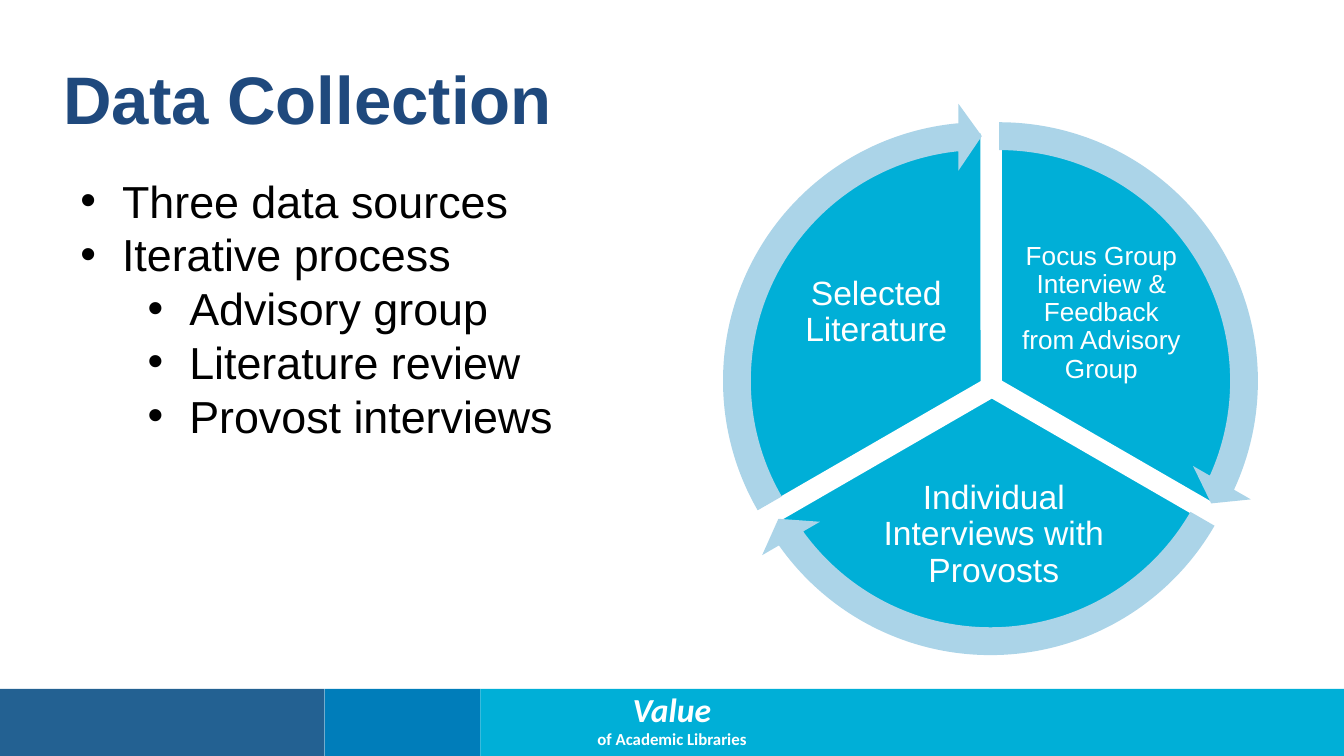
from lxml.etree import SubElement
from pptx import Presentation
from pptx.dml.color import RGBColor as RGB
from pptx.enum.shapes import MSO_SHAPE as Shape
from pptx.enum.text import MSO_ANCHOR as Anchor, PP_ALIGN as Align
from pptx.oxml.ns import qn
from pptx.util import Inches, Pt

WIDTH = Inches(10)
HEIGHT = WIDTH * 9 // 16
CELL = WIDTH / 100  # square grid, 100 columns wide
COLORS = {"navy": "236192", "blue": "007DBA", "cyan": "00AFD7",
          "pale": "ABD4E8", "title": "1F497D", "white": "FFFFFF",
          "black": "000000"}

BANDS = [(0, 24.15, "navy"), (24.15, 11.6, "blue"), (35.75, 64.25, "cyan")]
# box on the grid, start and end angle
SLICES = [((56, 10, 36.8, 36.8), 162, 18),
          ((55.4, 11.1, 36.8, 36.8), 18, 90),
          ((53.8, 9.8, 38.6, 37.3), 90, 162)]
# left, top, head angle, tail angle
ARROWS = [(53.65, 7.65, 14.73, 161.99),
          (53, 8.8, 86.72, 18),
          (52.35, 7.65, 158.73, 90)]
LABELS = [((75.35, 17.8, 13.2, 11), 14,
           "Focus Group Interview & Feedback from Advisory Group"),
          ((64.1, 35, 19.7, 9.6), 18, "Individual Interviews with Provosts"),
          ((58.3, 17.7, 13.8, 11.1), 18, "Selected Literature")]
POINTS = [(0, "Three data sources"), (0, "Iterative process"),
          (1, "Advisory group"), (1, "Literature review"),
          (1, "Provost interviews")]


def color(name):
    return RGB.from_string(COLORS[name])


def grid(*box):
    return [round(n * CELL) for n in box]


def apply(item, style):
    for key, value in style.items():
        setattr(item, key, value)


def style(run, size, tone, **more):
    apply(run.font, {"size": Pt(size), "name": "Arial", **more})
    run.font.color.rgb = color(tone)


def add_form(slide, kind, box, fill, angles=(), edge=None):
    form = slide.shapes.add_shape(kind, *grid(*box))
    form.shadow.inherit = False
    form.fill.solid()
    form.fill.fore_color.rgb = color(fill)
    for i, angle in enumerate(angles):
        form.adjustments[i] = angle
    if edge:
        form.line.color.rgb = color(edge)
        form.line.width = Pt(2)
    else:
        form.line.fill.background()


def add_text(slide, box, **more):
    frame = slide.shapes.add_textbox(*grid(*box)).text_frame
    apply(frame, {"word_wrap": True, **more})
    return frame


def add_title(slide, text):
    title = slide.shapes.title
    apply(title, dict(zip(("left", "top", "width", "height"),
                          grid(3.7, 3.55, 92.3, 7.5))))
    frame = title.text_frame
    frame.vertical_anchor = Anchor.MIDDLE
    para = frame.paragraphs[0]
    para.alignment = Align.LEFT
    run = para.add_run()
    run.text = text
    style(run, 36, "title", bold=True)


def add_label(slide, box, size, text):
    edges = ("left", "top", "right", "bottom")
    frame = add_text(slide, box, vertical_anchor=Anchor.MIDDLE,
                     **{f"margin_{edge}": Inches(0.02) for edge in edges})
    para = frame.paragraphs[0]
    apply(para, {"alignment": Align.CENTER, "line_spacing": 0.9})
    run = para.add_run()
    run.text = text
    style(run, size, "white")


def add_points(slide, box, points):
    frame = add_text(slide, box)
    for i, (level, text) in enumerate(points):
        para = frame.add_paragraph() if i else frame.paragraphs[0]
        props = para._p.get_or_add_pPr()
        props.set("marL", str(Inches(0.31 + 0.5 * level)))
        props.set("indent", str(Inches(-0.31)))
        SubElement(props, qn("a:buFont")).set("typeface", "Arial")
        SubElement(props, qn("a:buChar")).set("char", "•")
        apply(para, {"level": level, "line_spacing": Pt(28.8)})
        run = para.add_run()
        run.text = text
        style(run, 24, "black")


def add_footer(slide):
    for left, width, tone in BANDS:
        add_form(slide, Shape.RECTANGLE, (left, 51.25, width, 5), tone)
    para = add_text(slide, (0, 50.75, 100, 5.5)).paragraphs[0]
    para.alignment = Align.CENTER
    name = para.add_run()
    name.text = "Value"
    style(name, 18, "white", name="Calibri", bold=True, italic=True)
    para.add_line_break()
    rest = para.add_run()
    rest.text = "of Academic Libraries"
    style(rest, 9, "white", name="Calibri", bold=True)


def add_cycle(slide):
    for box, start, end in SLICES:
        add_form(slide, Shape.PIE, box, "cyan", (start, end), "white")
    for left, top, head, tail in ARROWS:
        add_form(slide, Shape.CIRCULAR_ARROW, (left, top, 41.4, 41.4),
                 "pale", (0.05, 3.28, head, tail, 0.06))
    for label in LABELS:
        add_label(slide, *label)


def main():
    deck = Presentation()
    apply(deck, {"slide_width": WIDTH, "slide_height": HEIGHT})
    slide = deck.slides.add_slide(deck.slide_layouts[5])
    add_footer(slide)
    add_title(slide, "Data Collection")
    add_cycle(slide)
    add_points(slide, (5, 12.4, 45.8, 24.2), POINTS)
    deck.save("out.pptx")


if __name__ == "__main__":
    main()
